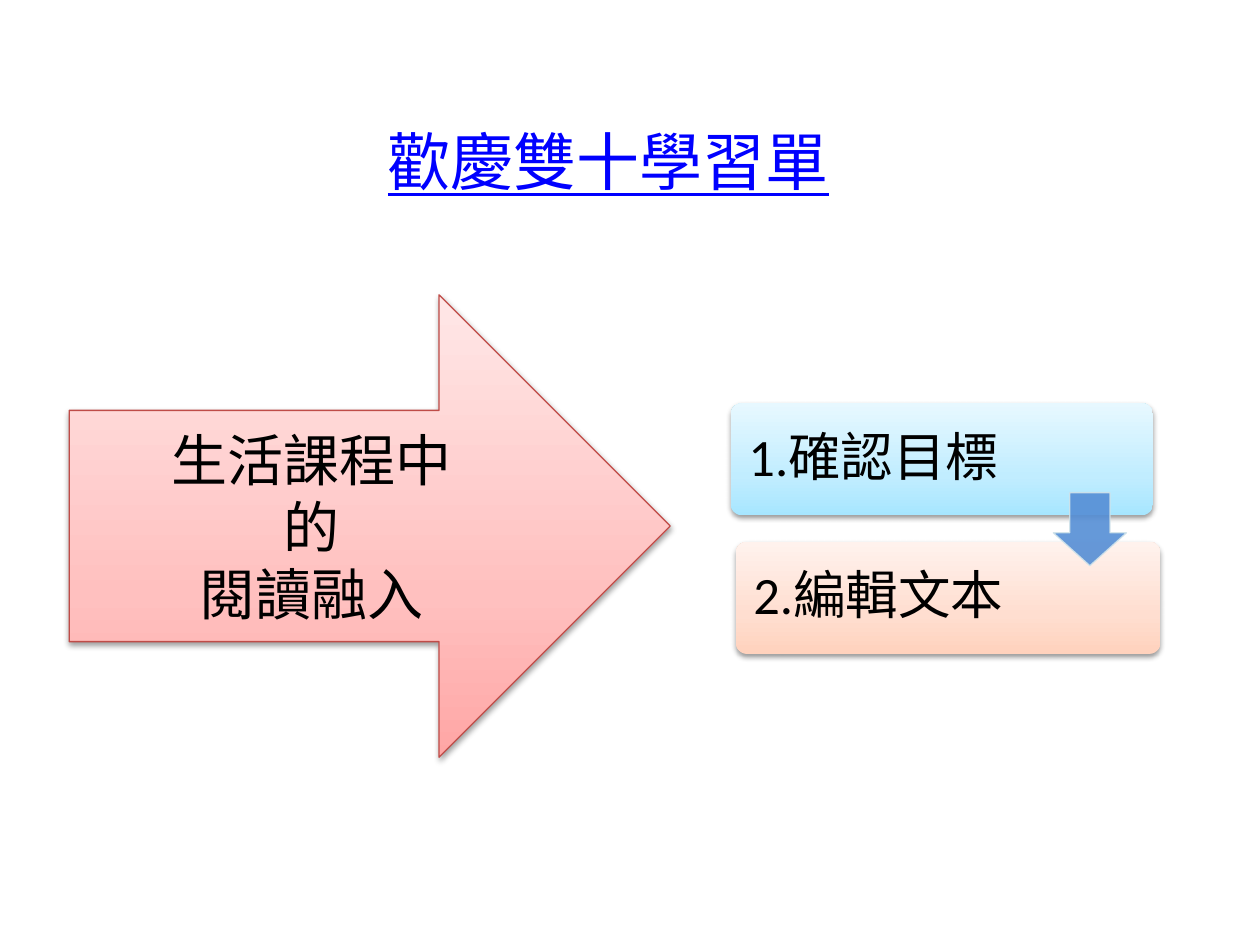
from lxml import etree
from pptx import Presentation, util as u
from pptx.dml.color import RGBColor
from pptx.enum import shapes, text
from pptx.oxml import parse_xml
from pptx.oxml.ns import nsdecls, qn

THEME = {
    "font": "Calibri", "ink": "000000", "title_ink": "0000FF",
    "title_size": 36, "topic_size": 32, "step_size": 30,
    "red": ("FFA6A5", "FFC0BF", "FFE7E7"), "red_edge": "BF4C48",
    "blue": ("A7E6FF", "C1EDFF", "E7F8FF"),
    "orange": ("FFD2BD", "FFDED0", "FFF2ED"),
    "link_fill": "558ED5", "link_edge": "D0E3EA", "link_opacity": 90,
}
STOPS = (0, 35, 100)

TITLE = "歡慶雙十學習單"
TOPIC = ["生活課程中", "的", "閱讀融入"]
# text, gradient, card left, card width, text width
STEPS = [
    ("1.確認目標", "blue", 5.8, 3.35, 2.62),
    ("2.編輯文本", "orange", 5.84, 3.37, 2.27),
]
STEP_TOP, STEP_PITCH, STEP_HEIGHT = 3.2, 1.1, 0.89
CARD_INSET = 0.02

deck = Presentation()
deck.slide_width, deck.slide_height = u.Inches(10), u.Inches(7.5)
slide = deck.slides.add_slide(deck.slide_layouts[6])


def box(left, top, width, height):
    return [u.Inches(n) for n in (left, top, width, height)]


def write(frame, lines, size, color=THEME["ink"], align=text.PP_ALIGN.LEFT,
          anchor=text.MSO_ANCHOR.TOP, inset=None, spacing=None, underline=None):
    frame.word_wrap = True
    frame.vertical_anchor = anchor
    if inset is not None:
        frame.margin_left = frame.margin_right = u.Inches(inset)
        frame.margin_top = frame.margin_bottom = u.Inches(inset)
    for i, line in enumerate(lines):
        paragraph = frame.add_paragraph() if i else frame.paragraphs[0]
        paragraph.alignment = align
        paragraph.line_spacing = spacing
        run = paragraph.add_run()
        run.text = line
        run.font.name, run.font.size = THEME["font"], u.Pt(size)
        run.font.underline = underline
        run.font.color.rgb = RGBColor.from_string(color)


def add_shape(kind, place, edge=None, adjust=()):
    shape = slide.shapes.add_shape(kind, *box(*place))
    shape.shadow.inherit = False
    for i, value in enumerate(adjust):
        shape.adjustments[i] = value
    if edge:
        shape.line.color.rgb = RGBColor.from_string(edge)
        shape.line.width = u.Pt(0.75)
    else:
        shape.line.fill.background()
    return shape


def shade(shape, colors):
    """Fill with an upward three-stop gradient and cast a soft shadow below."""
    shape.fill.gradient()
    shape.fill.gradient_angle = 90
    stops = shape._element.spPr.find(".//" + qn("a:gsLst"))
    for stop in list(stops):
        stops.remove(stop)
    for position, color in zip(STOPS, colors):
        stops.append(parse_xml(
            f'<a:gs {nsdecls("a")} pos="{position * 1000}"><a:srgbClr val="{color}"/></a:gs>'))
    shape._element.spPr.find(qn("a:effectLst")).append(parse_xml(
        f'<a:outerShdw {nsdecls("a")} blurRad="{u.Pt(3.1)}" dist="{u.Pt(1.6)}" '
        'dir="5400000" rotWithShape="0"><a:srgbClr val="000000">'
        '<a:alpha val="38000"/></a:srgbClr></a:outerShdw>'))


title = slide.shapes.add_textbox(*box(2.98, 0.92, 4.15, 0.71))
write(title.text_frame, [TITLE], THEME["title_size"], THEME["title_ink"], underline=True)

for row, (step, gradient, left, width, text_width) in enumerate(STEPS):
    top = STEP_TOP + row * STEP_PITCH
    card = add_shape(shapes.MSO_SHAPE.ROUNDED_RECTANGLE,
                     (left, top, width, STEP_HEIGHT), adjust=[0.1])
    shade(card, THEME[gradient])
    label = slide.shapes.add_textbox(*box(left + CARD_INSET, top + CARD_INSET,
                                          text_width, STEP_HEIGHT - 2 * CARD_INSET))
    write(label.text_frame, [step], THEME["step_size"],
          anchor=text.MSO_ANCHOR.MIDDLE, inset=0.12, spacing=0.9)

link = add_shape(shapes.MSO_SHAPE.DOWN_ARROW, (8.36, 3.91, 0.58, 0.58),
                 THEME["link_edge"], adjust=[0.55, 0.45])
link.fill.solid()
link.fill.fore_color.rgb = RGBColor.from_string(THEME["link_fill"])
for color in link._element.spPr.iter(qn("a:srgbClr")):
    etree.SubElement(color, qn("a:alpha")).set("val", str(THEME["link_opacity"] * 1000))

topic = add_shape(shapes.MSO_SHAPE.RIGHT_ARROW, (0.55, 2.34, 4.77, 3.67), THEME["red_edge"])
shade(topic, THEME["red"])
write(topic.text_frame, TOPIC, THEME["topic_size"],
      align=text.PP_ALIGN.CENTER, anchor=text.MSO_ANCHOR.MIDDLE)

deck.save("out.pptx")
